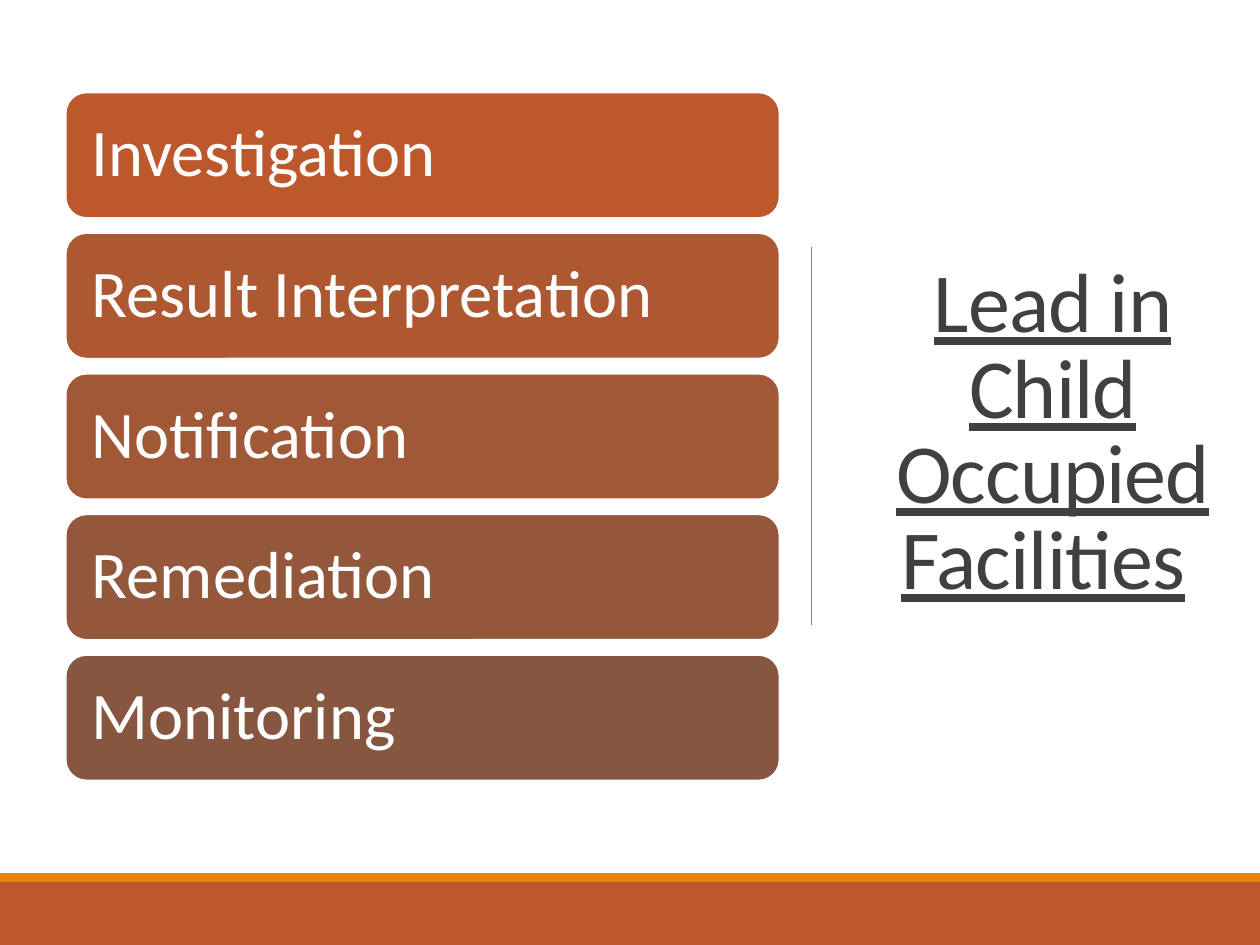
from dataclasses import dataclass

from lxml import etree
from pptx import Presentation
from pptx.dml.color import RGBColor
from pptx.enum.shapes import MSO_CONNECTOR, MSO_SHAPE
from pptx.enum.text import MSO_ANCHOR, MSO_AUTO_SIZE, PP_ALIGN
from pptx.oxml.ns import qn
from pptx.util import Cm, Pt

RECT, ROUND = MSO_SHAPE.RECTANGLE, MSO_SHAPE.ROUNDED_RECTANGLE
LINE = MSO_CONNECTOR.STRAIGHT
MID = MSO_ANCHOR.MIDDLE
LEFT, CENTER = PP_ALIGN.LEFT, PP_ALIGN.CENTER
FIXED = MSO_AUTO_SIZE.NONE


@dataclass(frozen=True)
class Theme:
    """Colours, font and type sizes of the slide."""
    font: str = "Calibri"
    ink: str = "404040"
    rule: str = "808080"
    white: str = "FFFFFF"
    gold: str = "E48312"
    rust: str = "BD582C"
    steps: tuple = ("BD582C", "AE5832", "A05837", "93573C", "865640")
    head: int = 48
    body: int = 38


THEME = Theme()
STEPS = ("Investigation", "Result Interpretation", "Notification",
         "Remediation", "Monitoring")


def apply(item, **values):
    """Set each named value on the item."""
    for name, value in values.items():
        setattr(item, name, value)


def write(run, size, color, **values):
    """Give a run its font, size and colour."""
    apply(run.font, name=THEME.font, size=Pt(size), **values)
    run.font.color.rgb = RGBColor.from_string(color)


def add_block(slide, kind, box, fill, edge=None):
    """Add a filled shape in the box, with an edge if a colour is given."""
    block = slide.shapes.add_shape(kind, *map(Cm, box))
    block.shadow.inherit = False
    block.fill.solid()
    block.fill.fore_color.rgb = RGBColor.from_string(fill)
    if edge:
        block.line.color.rgb = RGBColor.from_string(edge)
        block.line.width = Pt(1.25)
    else:
        block.line.fill.background()
    return block


def add_title(slide, box):
    """Place the underlined title in the box."""
    title = slide.shapes.title
    left, top, width, height = map(Cm, box)
    apply(title, left=left, top=top, width=width, height=height)
    frame = title.text_frame
    apply(frame, vertical_anchor=MID, word_wrap=True, auto_size=FIXED)
    para = frame.paragraphs[0]
    apply(para, alignment=CENTER, line_spacing=0.85)
    for text, under in (("Lead in Child Occupied Facilities", True), (" ", False)):
        run = para.add_run()
        run.text = text
        write(run, THEME.head, THEME.ink, underline=under)
        run.font._element.set("spc", "-50")


def add_rule(slide, box):
    """Draw a thin line from corner to corner of the box."""
    left, top, width, height = box
    rule = slide.shapes.add_connector(
        LINE, Cm(left), Cm(top), Cm(left + width), Cm(top + height))
    rule.line.color.rgb = RGBColor.from_string(THEME.rule)
    rule.line.width = Pt(0.5)
    etree.SubElement(rule._element.spPr, qn("a:effectLst"))


def add_foot(slide, box):
    """Fill the box with a rust band under a thin gold strip."""
    left, top, width, height = box
    strip = 0.18
    add_block(slide, RECT, (left, top, width, strip), THEME.gold)
    add_block(slide, RECT, (left, top + strip, width, height - strip), THEME.rust)


def add_steps(slide, box):
    """Stack the step bars evenly down the box."""
    left, top, width, height = box
    tall = 2.54
    pitch = (height - tall) / (len(STEPS) - 1)
    pad = Cm(0.41)
    for row, (text, fill) in enumerate(zip(STEPS, THEME.steps)):
        place = (left, top + row * pitch, width, tall)
        bar = add_block(slide, ROUND, place, fill, THEME.white)
        frame = bar.text_frame
        apply(frame, vertical_anchor=MID, word_wrap=True, margin_left=pad,
              margin_right=pad, margin_top=pad, margin_bottom=pad)
        para = frame.paragraphs[0]
        apply(para, alignment=LEFT, line_spacing=0.9)
        run = para.add_run()
        run.text = text
        write(run, THEME.body, THEME.white)


def main():
    """Build the slide and save it."""
    deck = Presentation()
    apply(deck, slide_width=Cm(25.4), slide_height=Cm(19.05))
    slide = deck.slides.add_slide(deck.slide_layouts[5])
    add_title(slide, (17.04, 1.75, 8.36, 14.05))
    add_rule(slide, (16.36, 4.98, 0, 7.62))
    add_foot(slide, (0, 17.6, 25.4, 1.45))
    add_steps(slide, (1.32, 1.86, 14.4, 13.88))
    deck.save("out.pptx")


if __name__ == "__main__":
    main()
